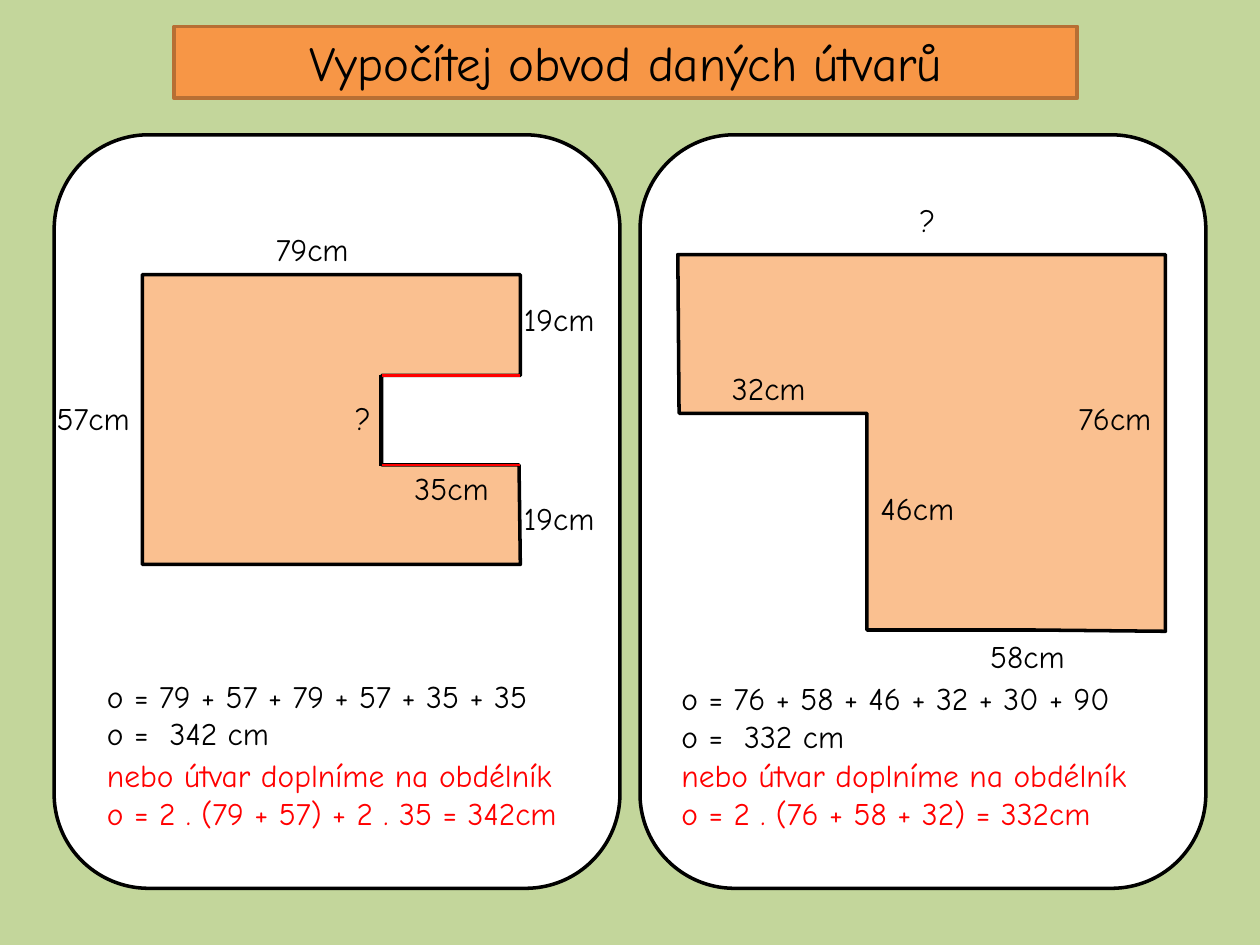
import pptx
import pptx.util
import pptx.dml.color
import pptx.enum.shapes
import pptx.enum.text
import pptx.oxml.ns
import lxml.etree

COLS, ROWS = 100, 75


def paint(code):
    return pptx.dml.color.RGBColor.from_string(code)


class Sheet:
    font, ink, red = "Comic Neue", "000000", "FF0000"
    back, card_fill, shape_fill = "C3D69B", "FFFFFF", "FAC090"

    def __init__(self, deck):
        self.slide = deck.slides.add_slide(deck.slide_layouts[5])
        self.shapes = self.slide.shapes
        self.col = deck.slide_width / COLS
        self.row = deck.slide_height / ROWS
        fill = self.slide.background.fill
        fill.solid()
        fill.fore_color.rgb = paint(self.back)

    def spot(self, x, y):
        return round(x * self.col), round(y * self.row)

    def box(self, x, y, wide, high):
        return self.spot(x, y) + self.spot(wide, high)

    def dress(self, shape, fill, line):
        shape.fill.solid()
        shape.fill.fore_color.rgb = paint(fill)
        self.stroke(shape, line, 2)

    def stroke(self, shape, line, width):
        shape.line.color.rgb = paint(line)
        shape.line.width = pptx.util.Pt(width)

    def letter(self, frame, text, size, color):
        frame.text = text
        frame.word_wrap = True
        for para in frame.paragraphs:
            for run in para.runs:
                run.font.name = self.font
                run.font.size = pptx.util.Pt(size)
                run.font.color.rgb = paint(color)

    def title(self, text, *area):
        head = self.shapes.title
        head.left, head.top, head.width, head.height = self.box(*area)
        self.dress(head, "F79646", "B76F34")
        self.letter(head.text_frame, text, 28, self.ink)
        head.text_frame.auto_size = pptx.enum.text.MSO_AUTO_SIZE.NONE
        head.text_frame.vertical_anchor = pptx.enum.text.MSO_ANCHOR.MIDDLE
        head.text_frame.paragraphs[0].alignment = pptx.enum.text.PP_ALIGN.CENTER

    def card(self, *area):
        kind = pptx.enum.shapes.MSO_SHAPE.ROUNDED_RECTANGLE
        card = self.shapes.add_shape(kind, *self.box(*area))
        card.shadow.inherit = False
        self.dress(card, self.card_fill, self.ink)

    def figure(self, points):
        first, *rest = [self.spot(*point) for point in points]
        pen = self.shapes.build_freeform(*first)
        pen.add_line_segments(rest, close=True)
        shape = pen.convert_to_shape()
        shape.shadow.inherit = False
        self.dress(shape, self.shape_fill, self.ink)

    def label(self, text, x, y, wide=11.8, high=4, color=ink):
        area = self.shapes.add_textbox(*self.box(x, y, wide, high))
        self.letter(area.text_frame, text, 18, color)

    def edge(self, start, end, color, width):
        kind = pptx.enum.shapes.MSO_CONNECTOR.STRAIGHT
        edge = self.shapes.add_connector(kind, *self.spot(*start), *self.spot(*end))
        self.stroke(edge, color, width)
        lxml.etree.SubElement(edge.element.spPr, pptx.oxml.ns.qn("a:effectLst"))

    def answer(self, x, y, sums, short):
        self.label(sums, x, y, 39.4, 7.1)
        self.label("nebo útvar doplníme na obdélník\n" + short,
                   x, 59.5, 41.7, 7.1, self.red)


def main():
    deck = pptx.Presentation()
    deck.slide_width = pptx.util.Inches(10)
    deck.slide_height = pptx.util.Inches(7.5)
    sheet = Sheet(deck)
    sheet.title("Vypočítej obvod daných útvarů", 13.8, 2.1, 71.7, 5.7)

    # Cards with the two figures
    for x in (4.3, 50.8):
        sheet.card(x, 10.7, 44.9, 59.8)
    sheet.figure([(11.3, 21.8), (41.3, 21.8), (41.3, 29.8), (30.3, 29.8),
                  (30.3, 36.9), (41.2, 36.9), (41.3, 44.8), (11.3, 44.8)])
    sheet.figure([(53.8, 20.2), (92.5, 20.2), (92.5, 50.1), (82.1, 50),
                  (68.8, 50), (68.8, 32.8), (53.9, 32.8)])

    # Edges of the notch
    sheet.edge((30.2, 29.8), (30.2, 37), sheet.ink, 2)
    for y in (29.8, 36.9):
        sheet.edge((30.3, y), (41.3, y), sheet.red, 1.5)

    # Side lengths, left then right
    for text, x, y in [
        ("79cm", 20.9, 17.8), ("19cm", 40.6, 23.3), ("57cm", 3.5, 31.2),
        ("?", 27.2, 31.2), ("35cm", 31.9, 36.7), ("19cm", 40.6, 39.1),
        ("?", 72, 15.5), ("32cm", 57.1, 28.8), ("76cm", 84.6, 31.2),
        ("46cm", 68.9, 38.3), ("58cm", 77.6, 50.1),
    ]:
        sheet.label(text, x, y)

    # Worked answers
    sheet.answer(7.5, 53.2, "o = 79 + 57 + 79 + 57 + 35 + 35\no =  342 cm",
                 "o = 2 . (79 + 57) + 2 . 35 = 342cm")
    sheet.answer(53.1, 53.4, "o = 76 + 58 + 46 + 32 + 30 + 90\no =  332 cm",
                 "o = 2 . (76 + 58 + 32) = 332cm")

    deck.save("out.pptx")


if __name__ == "__main__":
    main()
